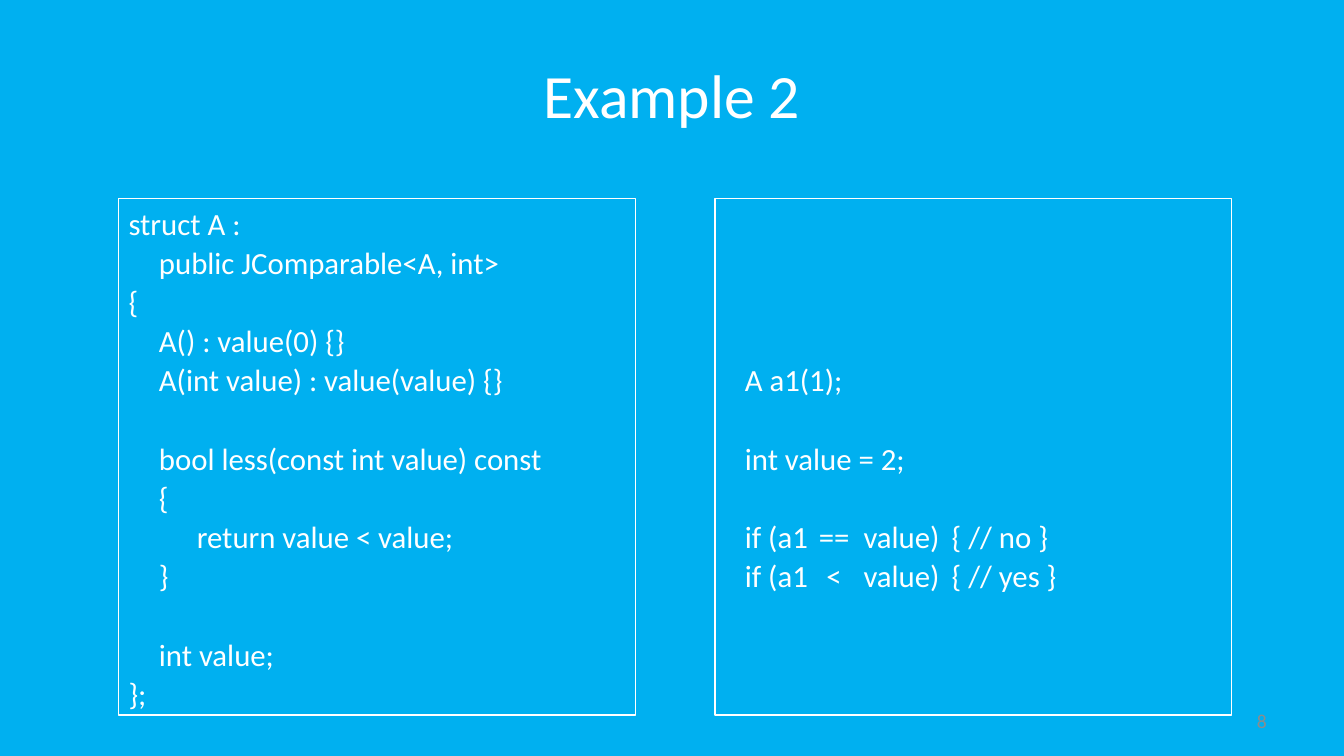
from dataclasses import dataclass

from lxml.etree import SubElement
from pptx import Presentation
from pptx.dml.color import RGBColor as Rgb
from pptx.enum.shapes import MSO_SHAPE as Preset
from pptx.enum.text import MSO_ANCHOR as Anchor, PP_ALIGN as Align
from pptx.oxml.ns import qn
from pptx.util import Pt


@dataclass(frozen=True)
class Theme:
    font: str = "Calibri"
    background: Rgb = Rgb(0x00, 0xB0, 0xF0)
    foreground: Rgb = Rgb(0xFF, 0xFF, 0xFF)
    muted: Rgb = Rgb(0x8C, 0x8C, 0x8C)
    title_size: int = 44
    code_size: int = 22
    number_size: int = 14
    code_leading: int = 28
    border: float = 0.75


THEME = Theme()
EMU_PER_PX = 9525
CODE_TOP, CODE_SIDE = 189, 492

# Code, as blocks of lines with one empty line between blocks
STRUCT_CODE = [
    ["struct A :", "\tpublic JComparable<A, int>", "{",
     "\tA() : value(0) {}", "\tA(int value) : value(value) {}"],
    ["\tbool less(const int value) const", "\t{",
     "\t\treturn value < value;", "\t}"],
    ["\tint value;", "};"],
]
USAGE_CODE = [
    ["\tA a1(1);"],
    ["\tint value = 2;"],
    ["\tif (a1\t==\tvalue)\t{ // no }", "\tif (a1\t<\tvalue)\t{ // yes }"],
]
STRUCT_TABS = [(29, "l"), (65, "l")]
USAGE_TABS = [(19, "l"), (104, "ctr"), (132, "l"), (216, "l")]


def px(length):
    return length * EMU_PER_PX


def style(paragraph, size, color, align):
    paragraph.alignment = align
    for run in paragraph.runs:
        run.font.name = THEME.font
        run.font.size = Pt(size)
        run.font.color.rgb = color


def add_label(slide, text, box, size, color, align):
    frame = slide.shapes.add_textbox(*map(px, box)).text_frame
    frame.word_wrap = True
    frame.vertical_anchor = Anchor.MIDDLE
    frame.text = text
    style(frame.paragraphs[0], size, color, align)


def set_tabs(paragraph, stops):
    tab_list = SubElement(paragraph._p.get_or_add_pPr(), qn("a:tabLst"))
    for position, align in stops:
        SubElement(tab_list, qn("a:tab"), pos=str(px(position)), algn=align)


def add_code_panel(slide, left, blocks, stops, top_inset=5):
    panel = slide.shapes.add_shape(
        Preset.RECTANGLE, *map(px, (left, CODE_TOP, CODE_SIDE, CODE_SIDE)))
    panel.shadow.inherit = False
    panel.fill.background()
    panel.line.color.rgb = THEME.foreground
    panel.line.width = Pt(THEME.border)

    frame = panel.text_frame
    frame.word_wrap = True
    frame.vertical_anchor = Anchor.MIDDLE
    frame.margin_top = px(top_inset)
    frame.text = "\n".join(line for block in blocks for line in block)

    paragraphs = iter(frame.paragraphs)
    for block_index, block in enumerate(blocks):
        for line_index in range(len(block)):
            code_line = next(paragraphs)
            style(code_line, THEME.code_size, THEME.foreground, Align.LEFT)
            code_line.line_spacing = Pt(THEME.code_leading)
            if block_index and not line_index:
                code_line.space_before = Pt(THEME.code_leading)
            set_tabs(code_line, stops)


def main():
    deck = Presentation()
    deck.slide_width, deck.slide_height = px(1280), px(720)
    slide = deck.slides.add_slide(deck.slide_layouts[6])
    slide.background.fill.solid()
    slide.background.fill.fore_color.rgb = THEME.background

    # Title and slide number
    add_label(slide, "Example 2", (64, 29, 1152, 120),
              THEME.title_size, THEME.foreground, Align.CENTER)
    add_label(slide, "8", (918, 667, 298, 38),
              THEME.number_size, THEME.muted, Align.RIGHT)

    # Definition on the left, usage on the right set one line lower
    add_code_panel(slide, 113, STRUCT_CODE, STRUCT_TABS)
    add_code_panel(slide, 681, USAGE_CODE, USAGE_TABS, top_inset=42)

    deck.save("out.pptx")


if __name__ == "__main__":
    main()
